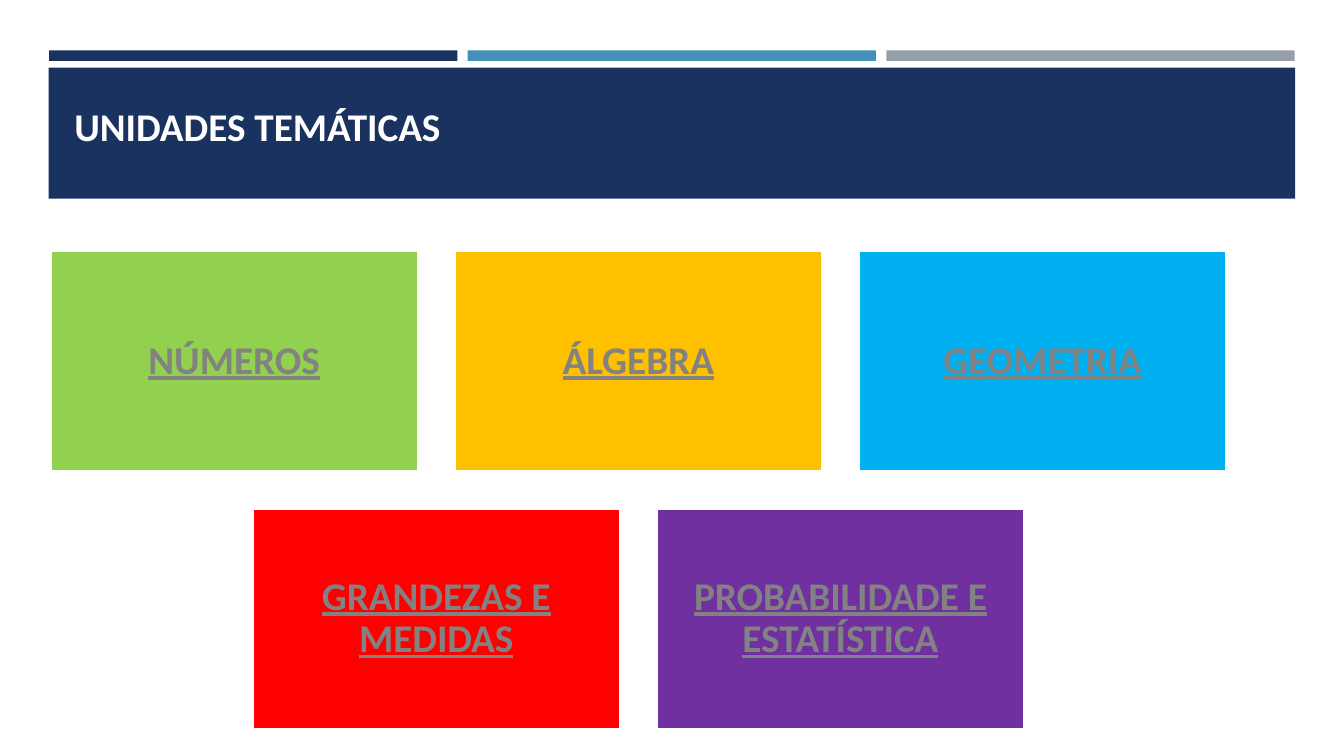
from pptx import Presentation
from pptx.dml.color import RGBColor
from pptx.enum.shapes import MSO_SHAPE as Shape
from pptx.enum.text import MSO_ANCHOR as Anchor, PP_ALIGN as Align
from pptx.util import Pt

NAVY, BLUE, GREY = "1A3260", "4590B8", "969FA7"
WHITE, LINK_GREY = "FFFFFF", "828282"


def add_block(left, top, width, height, fill, line=None):
    shape = slide.shapes.add_shape(Shape.RECTANGLE, Pt(left), Pt(top), Pt(width), Pt(height))
    shape.shadow.inherit = False
    shape.fill.solid()
    shape.fill.fore_color.rgb = RGBColor.from_string(fill)
    if line:
        shape.line.color.rgb = RGBColor.from_string(line)
        shape.line.width = Pt(1.75)
    else:
        shape.line.fill.background()
    return shape


def write_text(shape, text, color, align, anchor, inset_x, inset_y, spacing=1.0, underline=False):
    frame = shape.text_frame
    frame.word_wrap = True
    frame.vertical_anchor = anchor
    frame.margin_left = frame.margin_right = Pt(inset_x)
    frame.margin_top = frame.margin_bottom = Pt(inset_y)
    paragraph = frame.paragraphs[0]
    paragraph.alignment = align
    paragraph.line_spacing = spacing
    run = paragraph.add_run()
    run.text = text
    run.font.name = "Calibri"
    run.font.size = Pt(28)
    run.font.bold = True
    run.font.underline = underline
    run.font.color.rgb = RGBColor.from_string(color)


presentation = Presentation()
presentation.slide_width, presentation.slide_height = Pt(960), Pt(540)
slide = presentation.slides.add_slide(presentation.slide_layouts[6])

# Header: three thin bars above the title band
for column, color in enumerate((NAVY, BLUE, GREY)):
    add_block(35.1 + 299 * column, 36, 291.6, 7.5, color)
add_block(34.8, 48.4, 890.4, 93.6, NAVY)
title = slide.shapes.add_textbox(Pt(46.1), Pt(55.4), Pt(868.3), Pt(54.7))
write_text(title, "UNIDADES TEMÁTICAS", WHITE, Align.LEFT, Anchor.BOTTOM, 7.2, 3.6)

# Cards: three above, two below, each row centred on the same axis
card_width, card_height, gap = 262.5, 157.5, 26.25
axis, first_top = 456, 179.4
rows = [
    [("NÚMEROS", "92D050"), ("ÁLGEBRA", "FFC000"), ("GEOMETRIA", "00B0F0")],
    [("GRANDEZAS E MEDIDAS", "FF0000"), ("PROBABILIDADE E ESTATÍSTICA", "7030A0")],
]
for row, cards in enumerate(rows):
    row_width = len(cards) * (card_width + gap) - gap
    top = first_top + row * (card_height + gap)
    for column, (label, color) in enumerate(cards):
        left = axis - row_width / 2 + column * (card_width + gap)
        card = add_block(left, top, card_width, card_height, color, WHITE)
        write_text(card, label, LINK_GREY, Align.CENTER, Anchor.MIDDLE, 8.4, 8.4,
                   spacing=0.9, underline=True)

presentation.save("out.pptx")
